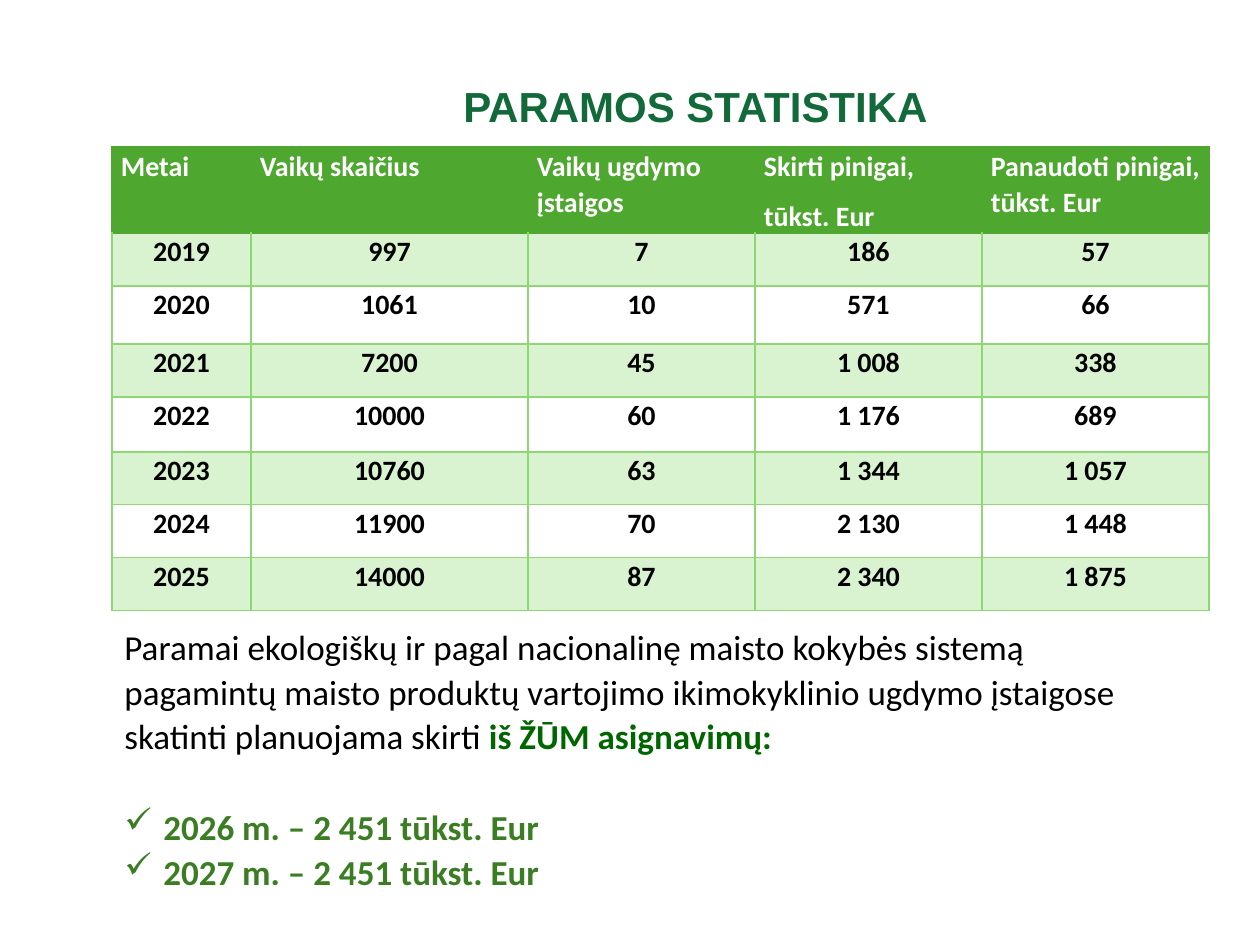
"""Build the slide with support statistics by year and the planned funding."""
from lxml import etree
from pptx import Presentation, util as u
from pptx.dml.color import RGBColor
from pptx.enum import text
from pptx.oxml import ns

TITLE = "PARAMOS STATISTIKA"
HEADER = ["Metai", "Vaikų skaičius", "Vaikų ugdymo įstaigos",
          "Skirti pinigai,\ntūkst. Eur", "Panaudoti pinigai, tūkst. Eur"]
YEARS = [
    ["2019", "997", "7", "186", "57"],
    ["2020", "1061", "10", "571", "66"],
    ["2021", "7200", "45", "1 008", "338"],
    ["2022", "10000", "60", "1 176", "689"],
    ["2023", "10760", "63", "1 344", "1 057"],
    ["2024", "11900", "70", "2 130", "1 448"],
    ["2025", "14000", "87", "2 340", "1 875"],
]
INTRO = ("Paramai ekologiškų ir pagal nacionalinę maisto kokybės sistemą pagamintų maisto "
         "produktų vartojimo ikimokyklinio ugdymo įstaigose skatinti planuojama skirti ")
SOURCE = "iš ŽŪM asignavimų:"
PLANS = ["2026 m. – 2 451 tūkst. Eur", "2027 m. – 2 451 tūkst. Eur"]

THEME = {
    "title": "126A3A", "header": "4EA72E", "band": "D9F2D0", "grid": "8DD873",
    "white": "FFFFFF", "ink": "000000", "source": "006600", "plan": "3B7D23",
    "title_font": "Arial", "body_font": "Calibri",
    "title_pt": 24, "body_pt": 20, "cell_pt": 16, "line": 1.07,
}
TITLE_BOX = (382, 86, 627, 40)
TABLE_AT = (112, 147)
COLS = [139, 277, 227, 227, 227]
ROWS = [83, 53, 58, 53, 55, 53, 53, 53]
NOTE_BOX = (112, 616, 1036, 315)
BULLET_INDENT = 39
CELL_INSET = 9


def px(n):
    return u.Emu(round(n * 914400 / 126))


def style(r, size, color, bold=True, font="body_font"):
    f = r.font
    f.name, f.size, f.bold = THEME[font], u.Pt(THEME[size]), bold
    f.color.rgb = RGBColor.from_string(THEME[color])


def add_box(s, box):
    tf = s.shapes.add_textbox(*map(px, box)).text_frame
    tf.word_wrap = True
    return tf


def add_bullet(p, char):
    pPr = p._p.get_or_add_pPr()
    pPr.set("marL", str(px(BULLET_INDENT)))
    pPr.set("indent", str(-px(BULLET_INDENT)))
    etree.SubElement(pPr, ns.qn("a:buChar")).set("char", char)


def set_borders(cell, colors):
    tcPr = cell._tc.get_or_add_tcPr()
    for i, (side, color) in enumerate(zip("LRTB", colors)):
        ln = etree.Element(ns.qn(f"a:ln{side}"), w=str(u.Pt(1)))
        fill = etree.SubElement(ln, ns.qn("a:solidFill"))
        etree.SubElement(fill, ns.qn("a:srgbClr")).set("val", THEME[color])
        tcPr.insert(i, ln)


def fill_cell(cell, value, row):
    head = row == 0
    cell.margin_left = cell.margin_right = px(CELL_INSET)
    cell.margin_top = cell.margin_bottom = 0
    cell.fill.solid()
    shade = "header" if head else "band" if row % 2 else "white"
    cell.fill.fore_color.rgb = RGBColor.from_string(THEME[shade])
    cell.text_frame.text = value
    for p in cell.text_frame.paragraphs:
        p.alignment = text.PP_ALIGN.LEFT if head else text.PP_ALIGN.CENTER
        p.line_spacing, p.space_after = THEME["line"], u.Pt(8)
        style(p.runs[0], "cell_pt", "white" if head else "ink")
    side = "header" if head else "grid"
    set_borders(cell, (side, side, "header" if row < 2 else "grid", side))


def add_title(s):
    tf = add_box(s, TITLE_BOX)
    tf.vertical_anchor = text.MSO_ANCHOR.MIDDLE
    tf.text = TITLE
    p = tf.paragraphs[0]
    p.alignment = text.PP_ALIGN.CENTER
    style(p.runs[0], "title_pt", "title", font="title_font")


def add_statistics(s):
    size = (sum(COLS), sum(ROWS))
    frame = s.shapes.add_table(len(ROWS), len(COLS), *map(px, TABLE_AT + size))
    table = frame.table
    table.horz_banding = False
    for col, w in zip(table.columns, COLS):
        col.width = px(w)
    for i, (h, values) in enumerate(zip(ROWS, [HEADER] + YEARS)):
        table.rows[i].height = px(h)
        for j, value in enumerate(values):
            fill_cell(table.cell(i, j), value, i)


def add_note(s):
    tf = add_box(s, NOTE_BOX)
    p = tf.paragraphs[0]
    p.line_spacing = THEME["line"]
    for value, color, bold in ((INTRO, "ink", False), (SOURCE, "source", True)):
        r = p.add_run()
        r.text = value
        style(r, "body_pt", color, bold)
    for i, plan in enumerate(PLANS):
        p = tf.add_paragraph()
        p.text = plan
        p.line_spacing, p.space_before = THEME["line"], u.Pt(0 if i else 26)
        add_bullet(p, "✓")
        style(p.runs[0], "body_pt", "plan")


def main():
    prs = Presentation()
    prs.slide_width, prs.slide_height = px(1260), px(945)
    s = prs.slides.add_slide(prs.slide_layouts[6])
    add_title(s)
    add_note(s)
    add_statistics(s)
    prs.save("out.pptx")


if __name__ == "__main__":
    main()
